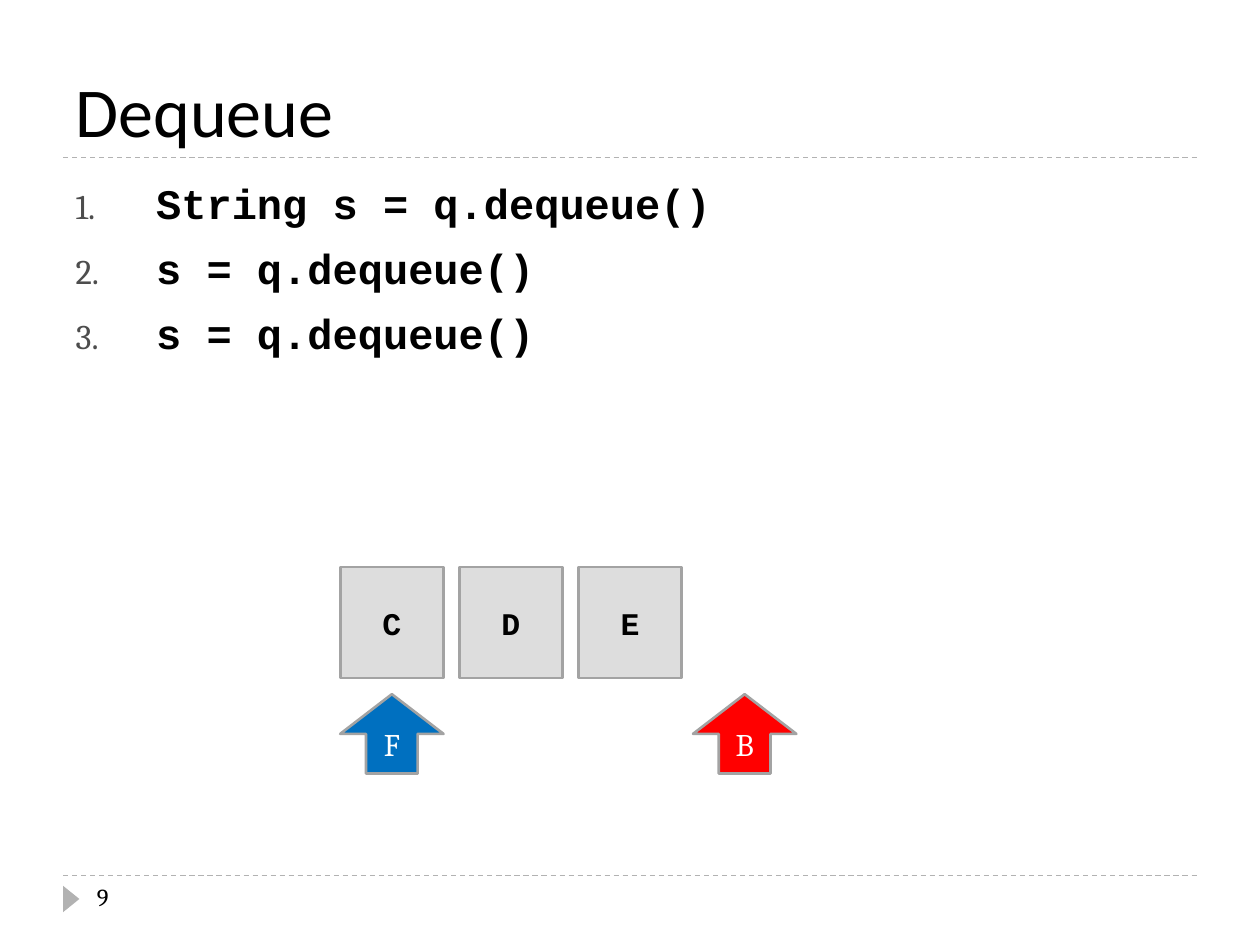
from lxml import etree
from pptx import Presentation
from pptx.dml.color import RGBColor
from pptx.enum import dml, shapes, text
from pptx.oxml import ns
from pptx.util import Inches, Pt

COLORS = {
    "black": "000000",
    "white": "FFFFFF",
    "rule": "B2B2B2",
    "number": "4D4D4D",
    "cell": "DDDDDD",
    "outline": "A3A3A3",
    "front": "0070C0",
    "back": "FF0000",
}
CODE_FONT, TEXT_FONT, TITLE_FONT = "Courier New", "Cambria", "Calibri"


def add_text(paragraph, content, color="black", **font_format):
    run = paragraph.add_run()
    run.text = content
    run.font.color.rgb = RGBColor.from_string(COLORS[color])
    for name, value in font_format.items():
        setattr(run.font, name, value)


def add_block(kind, left, top, width, height, fill, outline=None):
    """Add a filled preset shape, measured in inches, without shadow."""
    shape = slide.shapes.add_shape(
        kind, Inches(left), Inches(top), Inches(width), Inches(height))
    shape.shadow.inherit = False
    shape.fill.solid()
    shape.fill.fore_color.rgb = RGBColor.from_string(COLORS[fill])
    if outline:
        shape.line.color.rgb = RGBColor.from_string(COLORS[outline])
        shape.line.width = Pt(1.5)
    else:
        shape.line.fill.background()
    shape.text_frame.vertical_anchor = text.MSO_ANCHOR.MIDDLE
    shape.text_frame.paragraphs[0].alignment = text.PP_ALIGN.CENTER
    return shape


presentation = Presentation()
presentation.slide_width, presentation.slide_height = Inches(10), Inches(7.5)
slide = presentation.slides.add_slide(presentation.slide_layouts[1])
title, body = slide.placeholders

# Footer and title rules
for y in (6.95, 1.25):
    rule = slide.shapes.add_connector(
        shapes.MSO_CONNECTOR.STRAIGHT, Inches(0.5), Inches(y), Inches(9.5), Inches(y))
    rule.line.color.rgb = RGBColor.from_string(COLORS["rule"])
    rule.line.width = Pt(0.75)
    rule.line.dash_style = dml.MSO_LINE.DASH
    etree.SubElement(rule._element.spPr, ns.qn("a:effectLst"))

marker = add_block(shapes.MSO_SHAPE.ISOSCELES_TRIANGLE, 0.46, 7.07, 0.21, 0.13, "rule")
marker.rotation = 90

# Title and numbered code lines
for placeholder, top, height, anchor in (
    (title, 0.17, 1.08, text.MSO_ANCHOR.BOTTOM),
    (body, 1.33, 5.4, text.MSO_ANCHOR.TOP),
):
    placeholder.left, placeholder.width = Inches(0.5), Inches(9)
    placeholder.top, placeholder.height = Inches(top), Inches(height)
    placeholder.text_frame.vertical_anchor = anchor
    placeholder.text_frame.auto_size = text.MSO_AUTO_SIZE.NONE

heading = title.text_frame.paragraphs[0]
heading.alignment = text.PP_ALIGN.LEFT
add_text(heading, "Dequeue", name=TITLE_FONT, size=Pt(40))

code_lines = ["String s = q.dequeue()", "s = q.dequeue()", "s = q.dequeue()"]
for index, code in enumerate(code_lines):
    frame = body.text_frame
    paragraph = frame.add_paragraph() if index else frame.paragraphs[0]
    paragraph.space_before = Pt(6)
    properties = paragraph._p.get_or_add_pPr()
    properties.set("marL", str(Inches(0.56)))
    properties.set("indent", str(-Inches(0.56)))
    bullet_color = etree.SubElement(properties, ns.qn("a:buClr"))
    etree.SubElement(bullet_color, ns.qn("a:srgbClr"), val=COLORS["number"])
    etree.SubElement(properties, ns.qn("a:buSzPct"), val="76000")
    etree.SubElement(properties, ns.qn("a:buFont"), typeface=TEXT_FONT)
    etree.SubElement(properties, ns.qn("a:buAutoNum"), type="arabicPeriod")
    add_text(paragraph, " ", name=TEXT_FONT, size=Pt(26))
    add_text(paragraph, code, name=CODE_FONT, size=Pt(24), bold=True)
    add_text(paragraph, " ", name=TEXT_FONT, size=Pt(26))

slide_number = slide.shapes.add_textbox(
    Inches(0.67), Inches(6.95), Inches(2.17), Inches(0.4))
slide_number.text_frame.word_wrap = True
add_text(slide_number.text_frame.paragraphs[0], "9", name=TEXT_FONT, size=Pt(14))

# Queue cells with the front and back pointers
queue_left, cell_width, cell_pitch = 2.7, 0.82, 0.945
for index, letter in enumerate("CDE"):
    cell = add_block(shapes.MSO_SHAPE.RECTANGLE, queue_left + index * cell_pitch,
                     4.5, cell_width, 0.88, "cell", "outline")
    add_text(cell.text_frame.paragraphs[0], letter,
             name=CODE_FONT, size=Pt(18), bold=True)

for letter, left, fill in (("F", queue_left, "front"), ("B", 5.5, "back")):
    pointer = add_block(shapes.MSO_SHAPE.UP_ARROW, left, 5.51, cell_width, 0.63,
                        fill, "outline")
    add_text(pointer.text_frame.paragraphs[0], letter, "white",
             name=TEXT_FONT, size=Pt(18))

presentation.save("out.pptx")
